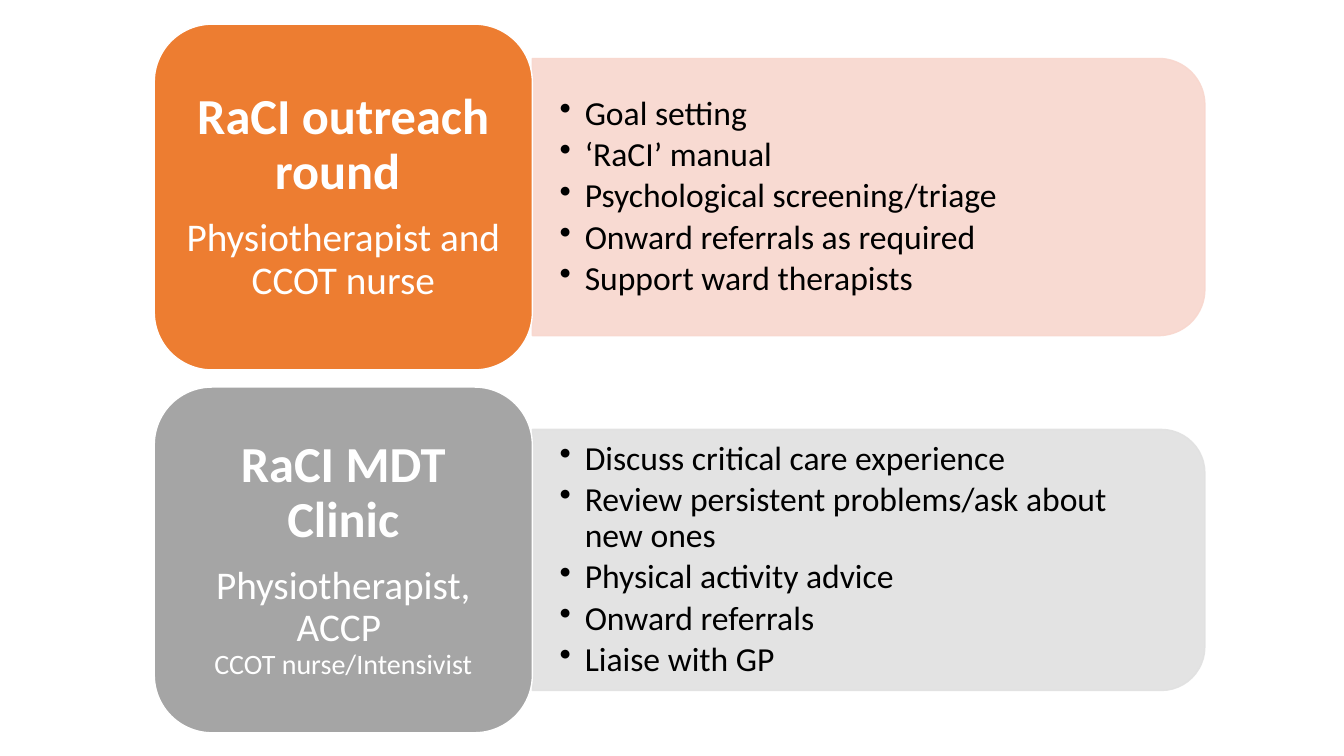
"""Build a slide with two rehabilitation services, each a title card and a bullet panel."""
from lxml import etree
from pptx import Presentation
from pptx.dml.color import RGBColor
from pptx.enum.shapes import MSO_SHAPE
from pptx.enum.text import MSO_ANCHOR, PP_ALIGN
from pptx.oxml.ns import qn
from pptx.util import Inches, Pt

ROUNDED = MSO_SHAPE.ROUNDED_RECTANGLE
TOP_ROUNDED = MSO_SHAPE.ROUND_2_SAME_RECTANGLE
MIDDLE = MSO_ANCHOR.MIDDLE
CENTER = PP_ALIGN.CENTER
LEFT = PP_ALIGN.LEFT

SERVICES = [
    {
        "title": "RaCI outreach round ",
        "staff": "Physiotherapist and CCOT nurse",
        "staff_sizes": [28],
        "bullets": ["Goal setting", "‘RaCI’ manual", "Psychological screening/triage",
                    "Onward referrals as required", "Support ward therapists"],
        "card_color": "ED7D31", "panel_color": "F8D7CE",
        "panel_height": 2.75, "text_height": 2.48,
    },
    {
        "title": "RaCI MDT Clinic",
        "staff": "Physiotherapist, ACCP \vCCOT nurse/Intensivist",
        "staff_sizes": [28, 20],
        "bullets": ["Discuss critical care experience",
                    "Review persistent problems/ask about new ones",
                    "Physical activity advice", "Onward referrals", "Liaise with GP"],
        "card_color": "A5A5A5", "panel_color": "E1E1E1",
        "panel_height": 2.59, "text_height": 2.34,
    },
]
SLIDE_WIDTH, SLIDE_HEIGHT = 13.33, 7.5
CARD_LEFT, CARD_TOP, CARD_WIDTH, CARD_HEIGHT = 1.53, 0.24, 3.75, 3.43
ROW_PITCH = 3.6
PANEL_LEFT, PANEL_LENGTH, PANEL_TEXT_WIDTH = CARD_LEFT + CARD_WIDTH, 6.67, 6.54
INDENT = 0.25


def rgb(color):
    return RGBColor.from_string(color)


def add_box(slide, preset, bounds, fill, line):
    shape = slide.shapes.add_shape(preset, *map(Inches, bounds))
    shape.shadow.inherit = False
    shape.fill.solid()
    shape.fill.fore_color.rgb = rgb(fill)
    shape.line.color.rgb = rgb(line)
    shape.line.width = Pt(1)
    return shape


def prepare_frame(shape, side, vertical):
    frame = shape.text_frame
    frame.word_wrap = True
    frame.vertical_anchor = MIDDLE
    frame.margin_left = frame.margin_right = Inches(side)
    frame.margin_top = frame.margin_bottom = Inches(vertical)
    return frame


def write_paragraphs(frame, entries, color, alignment, space_after, bulleted=False):
    for index, (text, sizes, bold) in enumerate(entries):
        paragraph = frame.paragraphs[0] if index == 0 else frame.add_paragraph()
        paragraph.text = text
        paragraph.alignment = alignment
        paragraph.line_spacing = 0.9
        properties = paragraph._p.get_or_add_pPr()
        spacing = etree.SubElement(properties, qn("a:spcAft"))
        etree.SubElement(spacing, qn("a:spcPct"), val=str(space_after * 1000))
        if bulleted:
            properties.set("marL", str(Inches(INDENT)))
            properties.set("indent", str(-Inches(INDENT)))
            etree.SubElement(properties, qn("a:buChar"), char="•")
        for run, size in zip(paragraph.runs, sizes):
            run.font.name = "Calibri"
            run.font.size = Pt(size)
            run.font.bold = bold
            run.font.color.rgb = rgb(color)


def add_panel(slide, service, center_y):
    height, color = service["panel_height"], service["panel_color"]
    center_x = PANEL_LEFT + PANEL_LENGTH / 2
    bounds = (center_x - height / 2, center_y - PANEL_LENGTH / 2, height, PANEL_LENGTH)
    panel = add_box(slide, TOP_ROUNDED, bounds, color, color)
    panel.rotation = 90
    for color_element in panel._element.spPr.iter(qn("a:srgbClr")):
        etree.SubElement(color_element, qn("a:alpha"), val="90000")

    text_height = service["text_height"]
    text_bounds = (PANEL_LEFT, center_y - text_height / 2, PANEL_TEXT_WIDTH, text_height)
    text_box = slide.shapes.add_textbox(*map(Inches, text_bounds))
    entries = [(bullet, [24], False) for bullet in service["bullets"]]
    write_paragraphs(prepare_frame(text_box, 0.27, 0.14), entries, "000000", LEFT, 15, True)


def add_card(slide, service, top):
    bounds = (CARD_LEFT, top, CARD_WIDTH, CARD_HEIGHT)
    card = add_box(slide, ROUNDED, bounds, service["card_color"], "FFFFFF")
    entries = [(service["title"], [36], True),
               (service["staff"], service["staff_sizes"], False)]
    write_paragraphs(prepare_frame(card, 0.15, 0.07), entries, "FFFFFF", CENTER, 35)


def main():
    presentation = Presentation()
    presentation.slide_width = Inches(SLIDE_WIDTH)
    presentation.slide_height = Inches(SLIDE_HEIGHT)
    slide = presentation.slides.add_slide(presentation.slide_layouts[6])
    for row, service in enumerate(SERVICES):
        top = CARD_TOP + row * ROW_PITCH
        add_panel(slide, service, top + CARD_HEIGHT / 2)
        add_card(slide, service, top)
    presentation.save("out.pptx")


if __name__ == "__main__":
    main()
